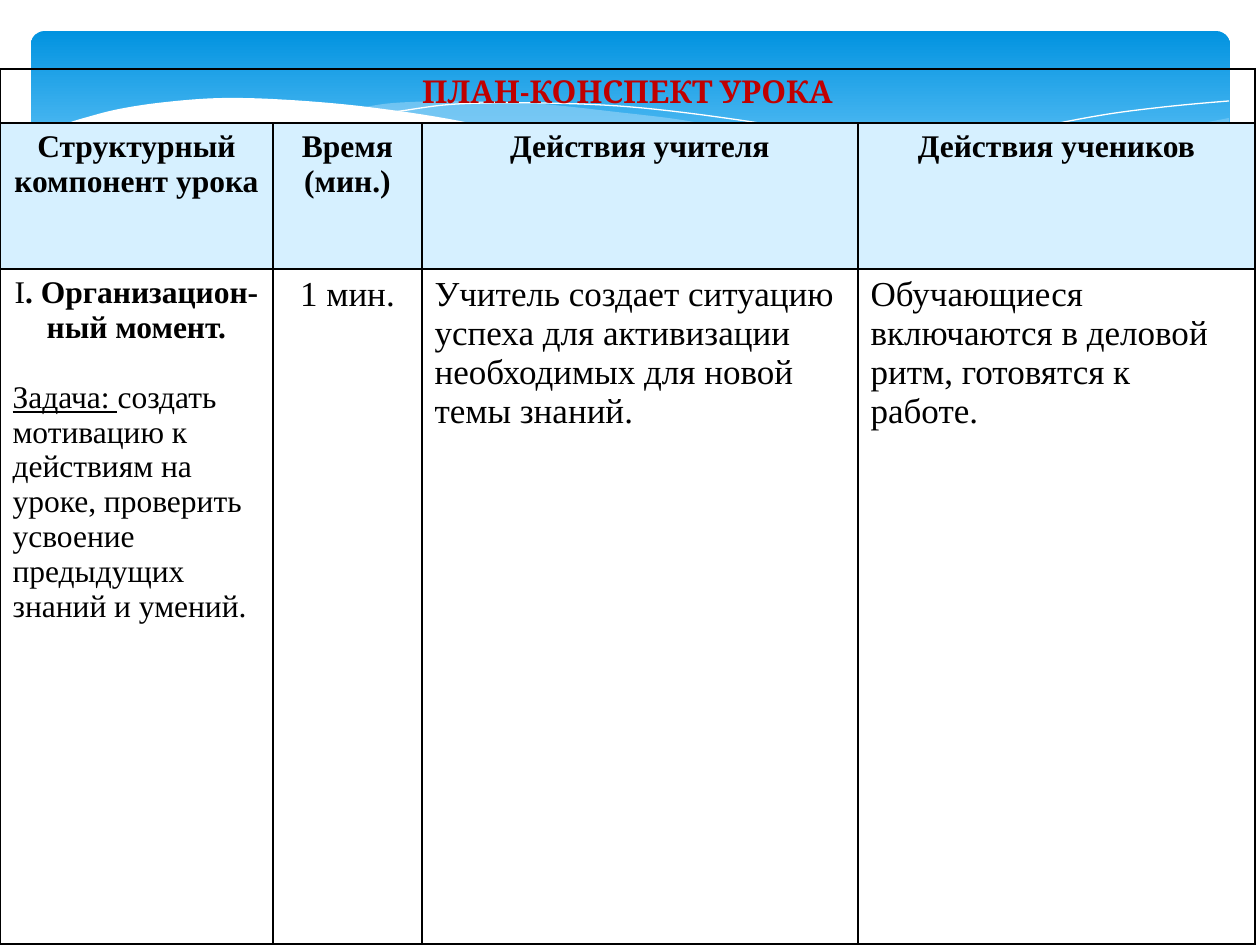
from dataclasses import dataclass

from lxml.etree import SubElement
from pptx import Presentation
from pptx.dml.color import RGBColor
from pptx.enum.shapes import MSO_SHAPE as Preset
from pptx.enum.text import PP_ALIGN as Align
from pptx.oxml import parse_xml
from pptx.oxml.ns import nsdecls, qn
from pptx.util import Emu, Pt

PX = 914400 / 126


def px(value):
    return Emu(round(value * PX))


@dataclass(frozen=True)
class Theme:
    sky_top: str = "0293E0"
    sky_bottom: str = "83D3FE"
    veil: str = "C6E7FC"
    white: str = "FFFFFF"
    title: str = "C00000"
    text: str = "000000"
    header: str = "D6F0FF"
    title_font: str = "Cambria"
    body_font: str = "Times New Roman"
    normal: int = 18
    large: int = 20


THEME = Theme()


def smooth(points, steps=8):
    """Return a Catmull-Rom curve through the points."""
    padded = [points[0], *points, points[-1]]
    curve = [points[0]]
    for a, b, c, d in zip(padded, padded[1:], padded[2:], padded[3:]):
        for step in range(1, steps + 1):
            t = step / steps
            curve.append(tuple(
                (2 * q + (r - p) * t + (2 * p - 5 * q + 4 * r - s) * t ** 2
                 + (3 * q - p - 3 * r + s) * t ** 3) / 2
                for p, q, r, s in zip(a, b, c, d)))
    return curve


class SlideBuilder:
    def __init__(self, slide, theme):
        self.slide = slide
        self.theme = theme

    def gradient_panel(self, left, top, width, height, rounding):
        shape = self.slide.shapes.add_shape(
            Preset.ROUNDED_RECTANGLE, *map(px, (left, top, width, height)))
        shape.adjustments[0] = rounding
        shape.shadow.inherit = False
        shape.line.fill.background()
        shape.fill.gradient()
        shape.fill.gradient_angle = 270
        stops = ((0, self.theme.sky_top), (0.9, self.theme.sky_bottom))
        for stop, (position, color) in zip(shape.fill.gradient_stops, stops):
            stop.position = position
            stop.color.rgb = RGBColor.from_string(color)

    def outline(self, points, closed):
        emu_points = [(px(x), px(y)) for x, y in points]
        builder = self.slide.shapes.build_freeform(*emu_points[0], scale=1.0)
        builder.add_line_segments(emu_points[1:], close=closed)
        shape = builder.convert_to_shape()
        shape.shadow.inherit = False
        return shape

    def area(self, points, color, opacity=100):
        shape = self.outline(points, closed=True)
        shape.line.fill.background()
        shape.fill.solid()
        shape.fill.fore_color.rgb = RGBColor.from_string(color)
        if opacity < 100:
            color_element = shape.fill._xPr.find(qn("a:solidFill"))[0]
            SubElement(color_element, qn("a:alpha"), val=str(opacity * 1000))

    def thin_curve(self, points):
        shape = self.outline(smooth(points), closed=False)
        shape.fill.background()
        shape.line.color.rgb = RGBColor.from_string(self.theme.white)
        shape.line.width = Pt(0)

    def table(self, left, top, columns, rows):
        frame = self.slide.shapes.add_table(
            len(rows), len(columns), px(left), px(top),
            px(sum(columns)), px(sum(rows)))
        table = frame.table
        table.first_row = table.horz_banding = False
        for column, width in zip(table.columns, columns):
            column.width = px(width)
        for row, height in zip(table.rows, rows):
            row.height = px(height)
        for cell in table.iter_cells():
            cell.fill.background()
            self.borders(cell)
        return table

    def borders(self, cell):
        properties = cell._tc.get_or_add_tcPr()
        for index, side in enumerate(("lnL", "lnR", "lnT", "lnB")):
            properties.insert(index, parse_xml(
                f'<a:{side} {nsdecls("a")} w="12700"><a:solidFill>'
                f'<a:srgbClr val="{self.theme.text}"/></a:solidFill></a:{side}>'))

    def cell(self, cell, paragraphs, fill=None, **base):
        """Write paragraphs given as (paragraph format, [(text, font format)])."""
        if fill:
            cell.fill.solid()
            cell.fill.fore_color.rgb = RGBColor.from_string(fill)
        defaults = {"name": self.theme.body_font, "size": self.theme.normal,
                    "color": self.theme.text}
        for index, (layout, runs) in enumerate(paragraphs):
            frame = cell.text_frame
            paragraph = frame.add_paragraph() if index else frame.paragraphs[0]
            for name, value in layout.items():
                setattr(paragraph, name, value)
            for text, changes in runs:
                run = paragraph.add_run()
                run.text = text
                style = {**defaults, **base, **changes}
                run.font.color.rgb = RGBColor.from_string(style.pop("color"))
                style["size"] = Pt(style["size"])
                for name, value in style.items():
                    setattr(run.font, name, value)


def draw_waves(builder, theme):
    builder.gradient_panel(31, 31, 1199, 197, 0.07)

    right_top = [(1229, 118), (1169, 130), (1085, 149), (982, 173), (833, 202)]
    right_bottom = [(833, 202), (922, 212), (1026, 217), (1120, 211),
                    (1187, 197), (1230, 177)]
    builder.area(smooth(right_top) + smooth(right_bottom), theme.veil, 29)

    middle_top = [(1125, 210), (1055, 200), (933, 179), (793, 146), (699, 123),
                  (616, 112), (529, 103), (455, 101), (394, 103), (360, 108)]
    middle_bottom = [(360, 108), (456, 122), (566, 146), (713, 180), (819, 199),
                     (926, 213), (1030, 218), (1125, 210)]
    builder.area(smooth(middle_top) + smooth(middle_bottom), theme.veil, 40)

    builder.thin_curve([(389, 113), (401, 111), (457, 104), (545, 103), (643, 108),
                        (766, 124), (876, 144), (1002, 171), (1143, 209)])
    builder.thin_curve([(772, 190), (876, 164), (978, 140), (1091, 117),
                        (1164, 107), (1229, 101)])

    front_crest = [(1231, 178), (1159, 201), (1071, 214), (980, 215), (867, 204),
                   (730, 181), (563, 144), (460, 121), (368, 107), (290, 100),
                   (223, 98), (166, 102), (119, 109), (84, 118), (58, 126), (29, 135)]
    builder.area(smooth(front_crest) + [(29, 282), (1231, 282)], theme.white)


def fill_lesson_plan(builder, theme):
    centered = {"alignment": Align.CENTER}
    table = builder.table(0, 69, columns=(273, 149, 436, 397), rows=(54, 146, 675))

    title = table.cell(0, 0)
    title.merge(table.cell(0, 3))
    builder.cell(title, [(centered, [("ПЛАН-КОНСПЕКТ УРОКА", {})])],
                 name=theme.title_font, color=theme.title, bold=True)

    headers = (["Структурный компонент урока"], ["Время", "(мин.)"],
               ["Действия учителя"], ["Действия учеников"])
    for column, lines in enumerate(headers):
        builder.cell(table.cell(1, column),
                     [(centered, [(line, {})]) for line in lines],
                     fill=theme.header, bold=True)

    builder.cell(table.cell(2, 0), [
        (centered, [("I", {}), (". Организацион-", {"bold": True})]),
        (centered, [("ный момент.", {"bold": True})]),
        ({"space_before": Pt(20)}, [
            ("Задача: ", {"underline": True}),
            ("создать мотивацию к действиям на уроке, проверить усвоение "
             "предыдущих знаний и умений.", {})]),
    ])
    stage = (
        (centered, "1 мин."),
        ({}, "Учитель создает ситуацию успеха для активизации необходимых "
             "для новой темы знаний."),
        ({}, "Обучающиеся включаются в деловой ритм, готовятся к работе."),
    )
    for column, (layout, text) in enumerate(stage, start=1):
        builder.cell(table.cell(2, column), [(layout, [(text, {})])], size=theme.large)


def main():
    presentation = Presentation()
    presentation.slide_width, presentation.slide_height = px(1260), px(945)
    slide = presentation.slides.add_slide(presentation.slide_layouts[6])
    builder = SlideBuilder(slide, THEME)
    draw_waves(builder, THEME)
    fill_lesson_plan(builder, THEME)
    presentation.save("out.pptx")


if __name__ == "__main__":
    main()
